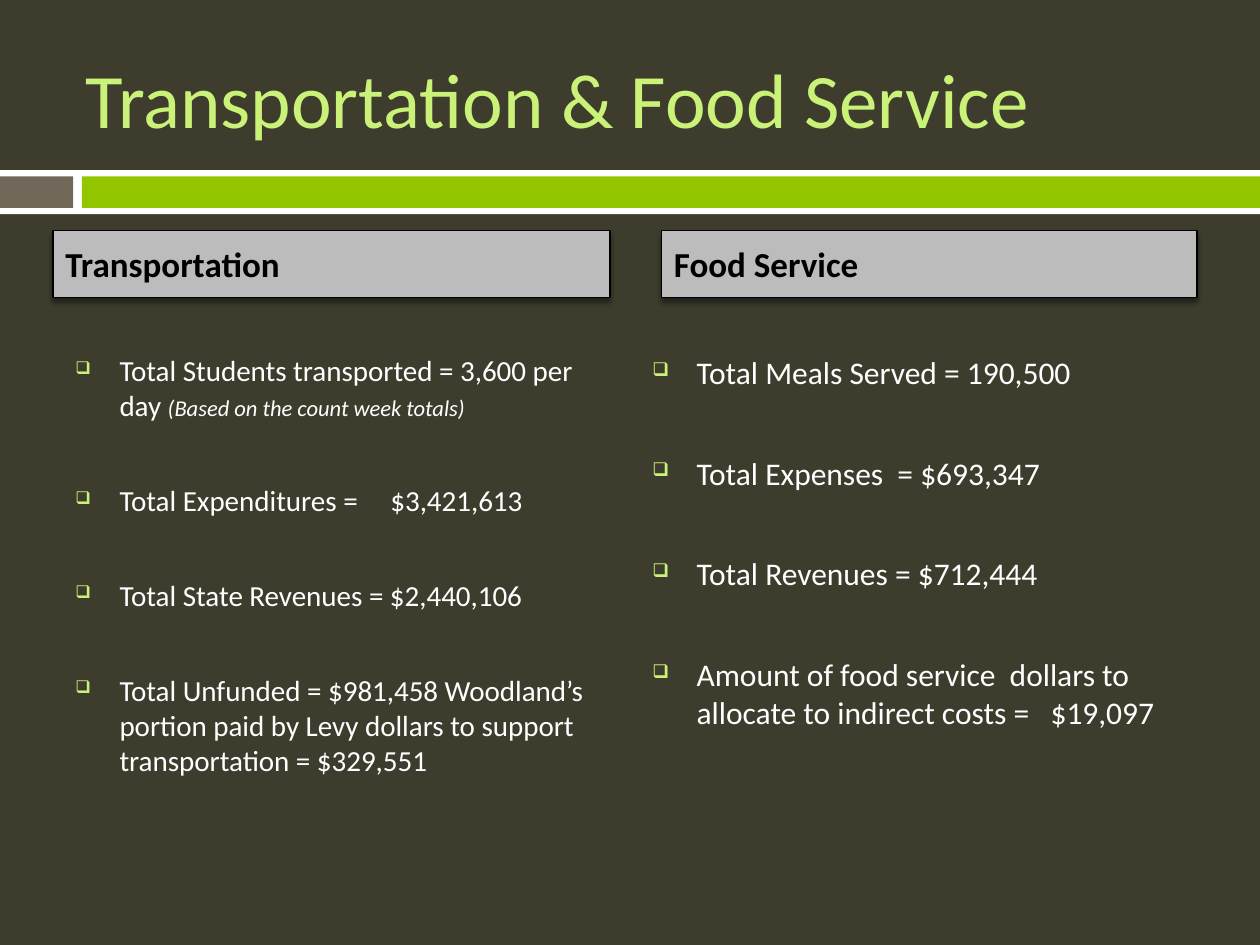
from lxml import etree
from pptx import Presentation
from pptx import util as u
from pptx.dml.color import RGBColor
from pptx.enum import shapes, text
from pptx.oxml.ns import qn

# Content: a run is (wording, size or None for the column's size, italic)
TITLE = "Transportation & Food Service"
COLS = [
    {"head": "Transportation", "box": (0.42, 1.83, 4.42, 0.53),
     "body": (0.5, 2.75, 4.42, 3.2), "size": 16.6, "gap": 34.3,
     "items": [
         [("Total Students transported = 3,600 per day ", None, False),
          ("(Based on the count week totals)", 12.9, True)],
         [("Total Expenditures =     $3,421,613", None, False)],
         [("Total State Revenues = $2,440,106", None, False)],
         [("Total Unfunded = $981,458 Woodland’s portion paid by Levy "
           "dollars to support transportation = $329,551", None, False)]]},
    {"head": "Food Service", "box": (5.25, 1.83, 4.25, 0.53),
     "body": (5.08, 2.75, 4.42, 3.25), "size": 18, "gap": 36,
     "items": [
         [("Total Meals Served = 190,500", None, False)],
         [("Total Expenses  = $693,347", None, False)],
         [("Total Revenues = $712,444", None, False)],
         [("Amount of food service  dollars to allocate to indirect "
           "costs =   $19,097", None, False)]]},
]
THEME = {"font": "Calibri", "back": "3E3D2D", "white": "FFFFFF",
         "black": "000000", "brown": "71685A", "green": "94C600",
         "lime": "CAF278", "gray": "BCBCBC", "title": 44, "head": 20}
BANDS = [((0, 1.35, 10, 0.35), "white"),
         ((0, 1.4, 0.58, 0.25), "brown"),
         ((0.65, 1.4, 9.35, 0.25), "green")]


def color(name):
    return RGBColor.from_string(THEME[name])


def place(box):
    return [u.Inches(n) for n in box]


def add_rect(slide, box, fill):
    rect = slide.shapes.add_shape(shapes.MSO_SHAPE.RECTANGLE, *place(box))
    rect.shadow.inherit = False
    rect.fill.solid()
    rect.fill.fore_color.rgb = color(fill)
    rect.line.fill.background()
    return rect


def set_font(font, size, tint, bold=False):
    font.name, font.size, font.bold = THEME["font"], u.Pt(size), bold
    font.color.rgb = color(tint)


def add_text(slide, box):
    frame = slide.shapes.add_textbox(*place(box)).text_frame
    frame.word_wrap = True
    return frame


def add_shadow(shape):
    list_ = shape._element.spPr.find(qn("a:effectLst"))
    glow = etree.SubElement(list_, qn("a:outerShdw"), blurRad=str(u.Pt(3)),
                            dist=str(u.Pt(2.4)), dir="5400000", rotWithShape="0")
    tint = etree.SubElement(glow, qn("a:srgbClr"), val=THEME["black"])
    etree.SubElement(tint, qn("a:alpha"), val="45000")


def add_bullet(para):
    props = para._p.get_or_add_pPr()
    props.set("marL", str(u.Inches(0.35)))
    props.set("indent", str(u.Inches(-0.35)))
    tint = etree.SubElement(props, qn("a:buClr"))
    etree.SubElement(tint, qn("a:srgbClr"), val=THEME["lime"])
    etree.SubElement(props, qn("a:buSzPct"), val="60000")
    etree.SubElement(props, qn("a:buChar"), char="❑")


def add_head(slide, col):
    box = add_rect(slide, col["box"], "gray")
    box.line.color.rgb = color("black")
    box.line.width = u.Pt(0.79)
    add_shadow(box)
    frame = box.text_frame
    frame.vertical_anchor = text.MSO_ANCHOR.MIDDLE
    para = frame.paragraphs[0]
    para.text = col["head"]
    para.alignment = text.PP_ALIGN.LEFT
    set_font(para.font, THEME["head"], "black", True)


def add_list(slide, col):
    frame = add_text(slide, col["body"])
    for i, item in enumerate(col["items"]):
        para = frame.add_paragraph() if i else frame.paragraphs[0]
        para.space_before = u.Pt(col["gap"] if i else 0)
        add_bullet(para)
        set_font(para.font, col["size"], "white")
        for words, size, slant in item:
            run = para.add_run()
            run.text = words
            if size:
                run.font.size = u.Pt(size)
            if slant:
                run.font.italic = True


def main():
    deck = Presentation()
    deck.slide_width, deck.slide_height = u.Inches(10), u.Inches(7.5)
    slide = deck.slides.add_slide(deck.slide_layouts[6])
    slide.background.fill.solid()
    slide.background.fill.fore_color.rgb = color("back")

    # Divider bands
    for box, fill in BANDS:
        add_rect(slide, box, fill)

    # Title
    frame = add_text(slide, (0.58, 0.3, 8.92, 0.95))
    frame.vertical_anchor = text.MSO_ANCHOR.MIDDLE
    frame.paragraphs[0].text = TITLE
    set_font(frame.paragraphs[0].font, THEME["title"], "lime")

    # Two columns
    for col in COLS:
        add_list(slide, col)
        add_head(slide, col)
    deck.save("out.pptx")


if __name__ == "__main__":
    main()
